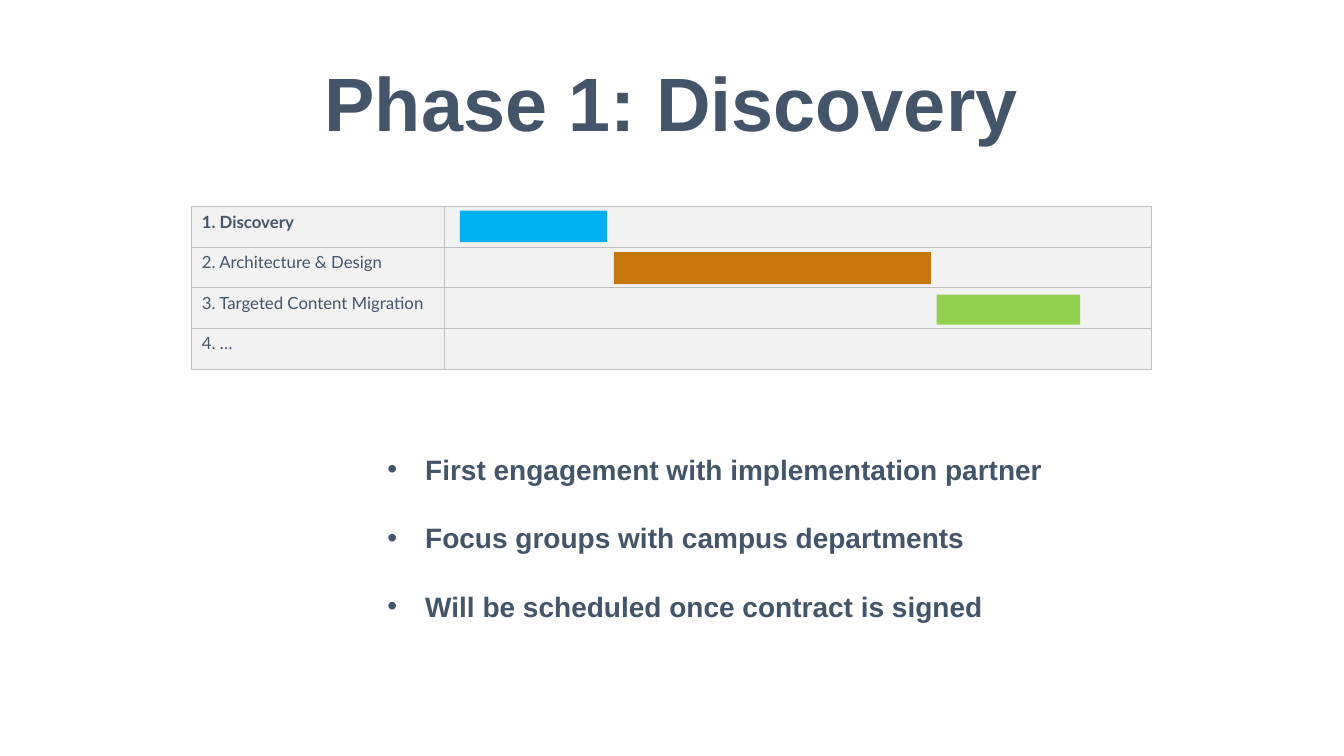
from lxml.etree import SubElement
from pptx import Presentation
from pptx.dml.color import RGBColor
from pptx.enum.shapes import MSO_SHAPE
from pptx.enum.text import MSO_ANCHOR, MSO_AUTO_SIZE, PP_ALIGN
from pptx.oxml.ns import qn
from pptx.util import Pt

PX = 6350
SLATE = RGBColor(0x44, 0x54, 0x69)
CELL_GREY = RGBColor(0xF2, 0xF2, 0xF2)
BORDER_GREY = RGBColor(0xBF, 0xBF, 0xBF)
BLUE = RGBColor(0x00, 0xB0, 0xF0)
ORANGE = RGBColor(0xC6, 0x77, 0x0C)
GREEN = RGBColor(0x92, 0xD0, 0x50)


def place(placeholder, left, top, width, height):
    placeholder.left, placeholder.top = left * PX, top * PX
    placeholder.width, placeholder.height = width * PX, height * PX
    placeholder.text_frame.auto_size = MSO_AUTO_SIZE.NONE
    placeholder.text_frame.word_wrap = True


def set_font(paragraph, name, size, bold):
    paragraph.font.name = name
    paragraph.font.size = Pt(size)
    paragraph.font.bold = bold
    paragraph.font.color.rgb = SLATE


prs = Presentation()
prs.slide_width, prs.slide_height = 1920 * PX, 1080 * PX
slide = prs.slides.add_slide(prs.slide_layouts[1])

title = slide.shapes.title
place(title, 340, 75, 1238, 137)
heading = title.text_frame
heading.text = "Phase 1: Discovery"
heading.vertical_anchor = MSO_ANCHOR.BOTTOM
heading.margin_left = heading.margin_right = 6 * PX
heading.margin_top = heading.margin_bottom = 3 * PX
heading.paragraphs[0].alignment = PP_ALIGN.CENTER
set_font(heading.paragraphs[0], "Arial", 54, True)

activities = slide.placeholders[1]
place(activities, 539, 639, 968, 255)
activities.text_frame.vertical_anchor = MSO_ANCHOR.TOP
activities.text_frame.text = "\n".join([
    "First engagement with implementation partner",
    "Focus groups with campus departments",
    "Will be scheduled once contract is signed",
])
for activity in activities.text_frame.paragraphs:
    set_font(activity, "Arial", 20, True)
    activity.line_spacing = 1.0
    activity.space_before = Pt(0)
    activity.space_after = Pt(25)
    indents = activity._p.get_or_add_pPr()
    indents.set("marL", str(54 * PX))
    indents.set("indent", str(-54 * PX))

phases = ["1. Discovery", "2. Architecture & Design", "3. Targeted Content Migration", "4. …"]
schedule = slide.shapes.add_table(
    len(phases), 2, 274 * PX, 295 * PX, 1371 * PX, 58 * len(phases) * PX).table
schedule.first_row = schedule.horz_banding = False
schedule.columns[0].width = 361 * PX
schedule.columns[1].width = 1010 * PX
for row, phase in enumerate(phases):
    schedule.rows[row].height = 58 * PX
    for column, label in enumerate([phase, ""]):
        cell = schedule.cell(row, column)
        cell.text = label
        set_font(cell.text_frame.paragraphs[0], "Lato", 12, row == 0)
        for side in ("a:lnL", "a:lnR", "a:lnT", "a:lnB"):
            border = SubElement(cell._tc.get_or_add_tcPr(), qn(side), w=str(Pt(0.5)))
            SubElement(SubElement(border, qn("a:solidFill")), qn("a:srgbClr"), val=str(BORDER_GREY))
        cell.fill.solid()
        cell.fill.fore_color.rgb = CELL_GREY

for left, top, width, height, color in [
    (657, 301, 210, 45, BLUE),
    (877, 360, 453, 46, ORANGE),
    (1338, 421, 205, 43, GREEN),
]:
    duration = slide.shapes.add_shape(
        MSO_SHAPE.RECTANGLE, left * PX, top * PX, width * PX, height * PX)
    duration.shadow.inherit = False
    duration.fill.solid()
    duration.fill.fore_color.rgb = color
    duration.line.fill.background()

prs.save("out.pptx")
